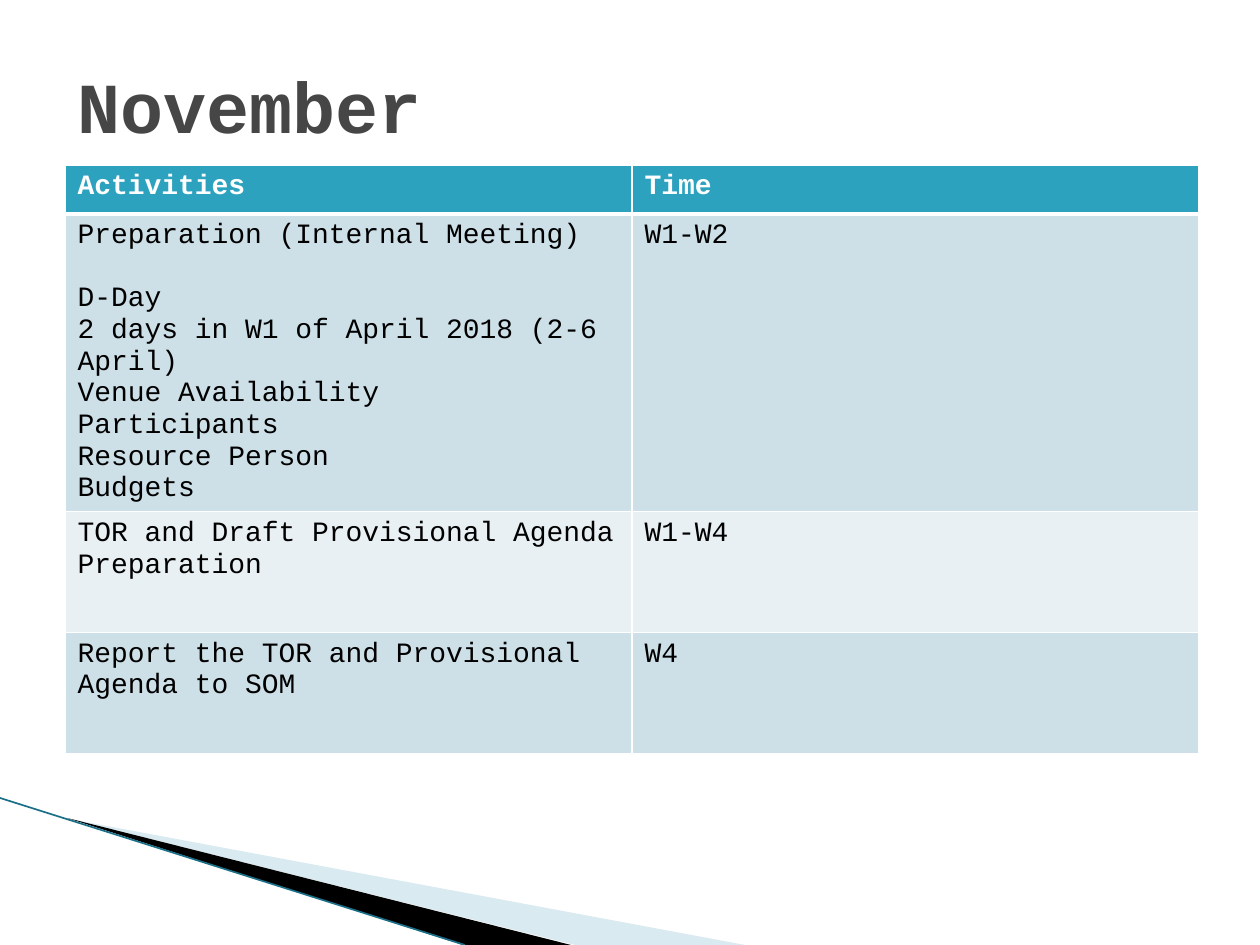
from typing import NamedTuple

from lxml.etree import SubElement
from pptx import Presentation
from pptx.dml.color import RGBColor
from pptx.enum.shapes import MSO_CONNECTOR
from pptx.enum.text import MSO_ANCHOR, PP_ALIGN
from pptx.oxml.ns import qn
from pptx.util import Pt

PX = 914400 / 126
FONT = "Courier New"
COLORS = {
    "white": "FFFFFF", "black": "000000", "title": "464646", "header": "2DA2BF",
    "band": "CDE0E8", "plain": "E8F0F4", "wedge": "A0CBDC", "edge": "1B7088",
}


class Wedge(NamedTuple):
    points: list[tuple[int, int]]
    color: str
    opacity: int = 100


class Row(NamedTuple):
    height: int
    activity: list[str]
    time: str
    fill: str
    header: bool = False


WEDGES = [
    Wedge([(69, 819), (745, 945), (575, 945)], "wedge", 40),
    Wedge([(67, 818), (571, 945), (463, 945)], "black"),
]
DETAILS = ["Preparation (Internal Meeting)", "D-Day", "2 days in W1 of April 2018 (2-6 April)",
           "Venue Availability", "Participants", "Resource Person", "Budgets"]
ROWS = [
    Row(49, ["Activities"], "Time", "header", header=True),
    Row(289, DETAILS, "W1-W2", "band"),
    Row(121, ["TOR and Draft Provisional Agenda Preparation"], "W1-W4", "plain"),
    Row(121, ["Report the TOR and Provisional Agenda to SOM"], "W4", "band"),
]


def px(n: int) -> int:
    return round(n * PX)


def rgb(name: str) -> RGBColor:
    return RGBColor.from_string(COLORS[name])


def write(tf, lines: list[str], *, size: int = 16, color: str = "black", bold: bool = False,
          gap_after_first: int = 0) -> None:
    for i, line in enumerate(lines):
        p = tf.paragraphs[0] if i == 0 else tf.add_paragraph()
        p.alignment = PP_ALIGN.LEFT
        if i == 1:
            p.space_before = Pt(gap_after_first)
        r = p.add_run()
        r.text = line
        r.font.name, r.font.size, r.font.bold = FONT, Pt(size), bold
        r.font.color.rgb = rgb(color)


def draw_wedge(s, wedge: Wedge) -> None:
    builder = s.shapes.build_freeform(*wedge.points[0], scale=PX)
    builder.add_line_segments(wedge.points[1:], close=True)
    sp = builder.convert_to_shape()
    sp.shadow.inherit = False
    sp.line.fill.background()
    sp.fill.solid()
    sp.fill.fore_color.rgb = rgb(wedge.color)
    if wedge.opacity < 100:
        clr = sp.element.spPr.find(qn("a:solidFill")).find(qn("a:srgbClr"))
        SubElement(clr, qn("a:alpha"), val=str(wedge.opacity * 1000))


def draw_edge(s) -> None:
    line = s.shapes.add_connector(MSO_CONNECTOR.STRAIGHT, px(0), px(798), px(465), px(945))
    line.line.color.rgb = rgb("edge")
    line.line.width = Pt(0.95)
    SubElement(line.element.spPr, qn("a:effectLst"))


def border_cell(cell, bottom: int, top: int) -> None:
    """Draw white borders; must run before the cell is filled."""
    tc_pr = cell._tc.get_or_add_tcPr()
    for side, width in {"L": 1, "R": 1, "T": top, "B": bottom}.items():
        ln = SubElement(tc_pr, qn(f"a:ln{side}"), w=str(Pt(width)))
        fill = SubElement(ln, qn("a:solidFill"))
        SubElement(fill, qn("a:srgbClr"), val=COLORS["white"])


def draw_table(s, rows: list[Row]) -> None:
    height = sum(row.height for row in rows)
    table = s.shapes.add_table(len(rows), 2, px(65), px(165), px(1134), px(height)).table
    for i, row in enumerate(rows):
        table.rows[i].height = px(row.height)
        for cell, lines in zip(table.rows[i].cells, (row.activity, [row.time])):
            border_cell(cell, bottom=3 if row.header else 1, top=3 if i == 1 else 1)
            cell.fill.solid()
            cell.fill.fore_color.rgb = rgb(row.fill)
            write(cell.text_frame, lines, bold=row.header,
                  color="white" if row.header else "black", gap_after_first=18)


def draw_title(s, text: str) -> None:
    title = s.shapes.title
    title.left, title.top, title.width, title.height = px(65), px(26), px(1134), px(158)
    title.text_frame.vertical_anchor = MSO_ANCHOR.MIDDLE
    write(title.text_frame, [text], size=41, color="title", bold=True)


def main() -> None:
    prs = Presentation()
    prs.slide_width, prs.slide_height = px(1260), px(945)
    s = prs.slides.add_slide(prs.slide_layouts[5])
    for wedge in WEDGES:
        draw_wedge(s, wedge)
    draw_edge(s)
    draw_table(s, ROWS)
    draw_title(s, "November")
    prs.save("out.pptx")


if __name__ == "__main__":
    main()
